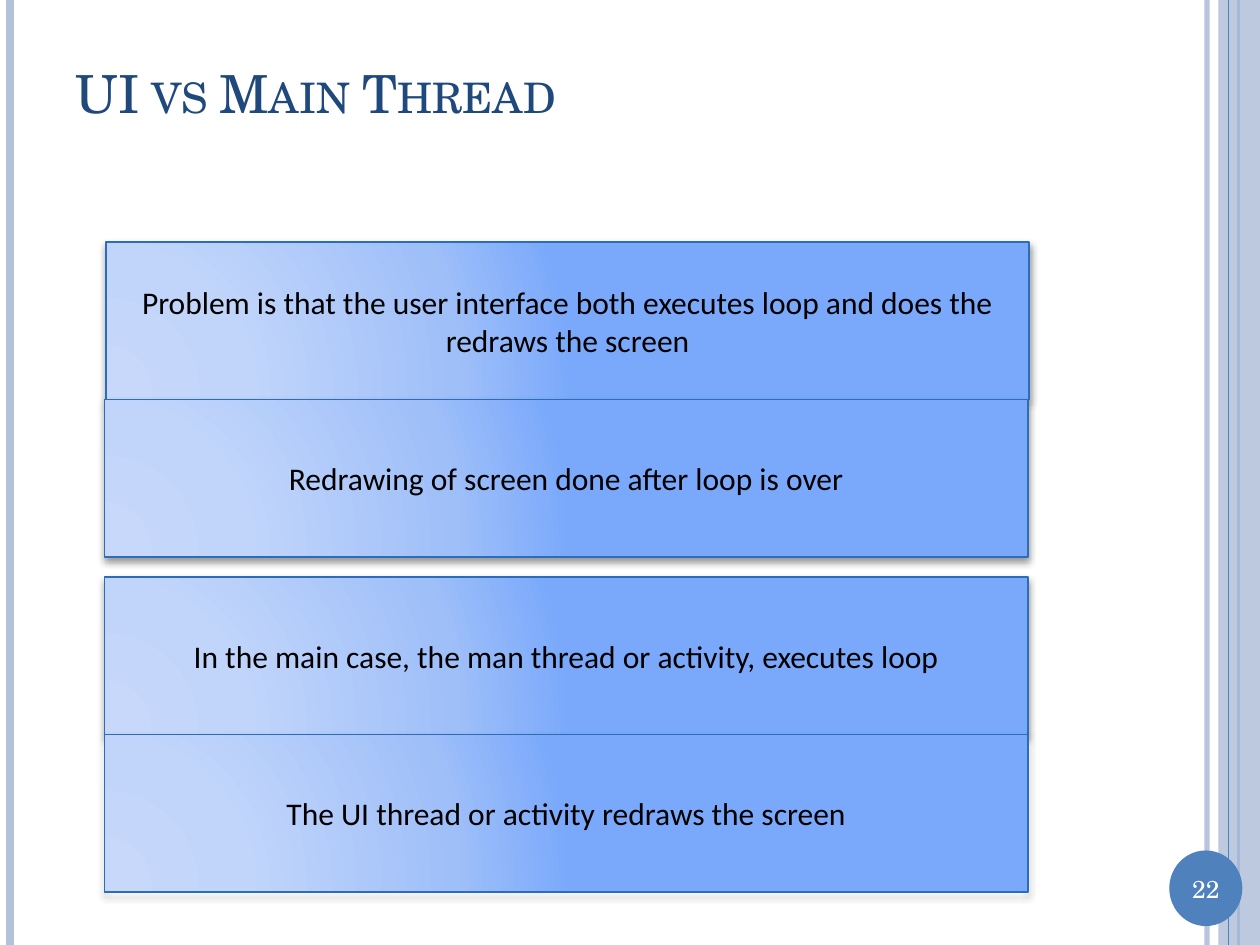
from pptx import Presentation
from pptx.util import Inches, Pt
from pptx.dml.color import RGBColor
from pptx.enum.shapes import MSO_SHAPE, MSO_CONNECTOR
from pptx.enum.text import PP_ALIGN, MSO_ANCHOR
from pptx.oxml import parse_xml
from pptx.oxml.ns import nsdecls
from lxml.etree import SubElement

C = {"pale": "B3C1DB", "blue": "4F81BD", "navy": "1F497D", "edge": "2C6CB9",
     "white": "FFFFFF", "black": "000000"}
STOPS = [(0, "C7D8FB"), (30, "C1D5FA"), (75, "9FBFF9"), (100, "7AA9FB")]
SERIF, SANS = "TeX Gyre Schola", "Calibri"


def add_text(sp, text, size, font, color, align):
    tf = sp.text_frame
    tf.word_wrap = True
    tf.vertical_anchor = MSO_ANCHOR.MIDDLE
    p = tf.paragraphs[0]
    p.alignment = align
    r = p.add_run()
    r.text = text
    r.font.size = Pt(size)
    r.font.name = font
    r.font.color.rgb = RGBColor.from_string(C[color])
    return r


def set_alpha(fmt, percent):
    clr = fmt._xPr.find(".//{*}srgbClr")
    SubElement(clr, clr.tag.replace("srgbClr", "alpha"), val=str(percent * 1000))


prs = Presentation()
prs.slide_width, prs.slide_height = Inches(10), Inches(7.5)
s = prs.slides.add_slide(prs.slide_layouts[6])

band = None
for x, color, width, alpha in [(9.58, "pale", 3, 93), (0.08, "pale", 4.5, 100),
                               (9.83, "blue", 1.5, 100), (9.75, "blue", 0.75, 100)]:
    if x == 9.75:
        band = s.shapes.add_shape(MSO_SHAPE.RECTANGLE, Inches(9.67), 0, Inches(0.33), Inches(7.5))
        band.shadow.inherit = False
        band.fill.solid()
        band.fill.fore_color.rgb = RGBColor.from_string(C["pale"])
        set_alpha(band.fill, 87)
        band.line.fill.background()
    line = s.shapes.add_connector(MSO_CONNECTOR.STRAIGHT, Inches(x), 0, Inches(x), Inches(7.5))
    line.line.color.rgb = RGBColor.from_string(C[color])
    line.line.width = Pt(width)
    if alpha < 100:
        set_alpha(line.line.fill, alpha)
    line._element.spPr.append(parse_xml(f"<a:effectLst {nsdecls('a')}/>"))

badge = s.shapes.add_shape(MSO_SHAPE.OVAL, Inches(9.28), Inches(6.75), Inches(0.58), Inches(0.6))
badge.shadow.inherit = False
badge.fill.solid()
badge.fill.fore_color.rgb = RGBColor.from_string(C["blue"])
badge.line.fill.background()
number = s.shapes.add_textbox(Inches(9.28), Inches(6.88), Inches(0.58), Inches(0.34))
add_text(number, "22", 14, SERIF, "white", PP_ALIGN.CENTER)

title = s.shapes.add_textbox(Inches(0.5), Inches(0.3), Inches(8.67), Inches(0.87))
r = add_text(title, "UI vs Main Thread", 30, SERIF, "navy", PP_ALIGN.LEFT)
r.font._element.set("cap", "small")

stops = "".join(f'<a:gs pos="{pos * 1000}"><a:srgbClr val="{c}"/></a:gs>' for pos, c in STOPS)
gradient = (f'<a:gradFill {nsdecls("a")} rotWithShape="1"><a:gsLst>{stops}</a:gsLst>'
            '<a:path path="circle"><a:fillToRect l="5000" t="100000" r="120000" b="10000"/>'
            '</a:path></a:gradFill>')
shadow = (f'<a:outerShdw {nsdecls("a")} blurRad="{Pt(4)}" dist="{Pt(2)}" dir="5400000" '
          f'rotWithShape="0"><a:srgbClr val="{C["black"]}"><a:alpha val="40000"/></a:srgbClr>'
          '</a:outerShdw>')

boxes = [
    (0.84, 1.92, "Problem is that the user interface both executes loop and does the redraws the screen"),
    (0.83, 4.58, "In the main case, the man thread or activity, executes loop"),
    (0.83, 3.17, "Redrawing of screen done after loop is over"),
    (0.83, 5.83, "The UI thread or activity redraws the screen"),
]
for x, y, text in boxes:
    sp = s.shapes.add_shape(MSO_SHAPE.RECTANGLE, Inches(x), Inches(y), Inches(7.33), Inches(1.25))
    sp.line.color.rgb = RGBColor.from_string(C["edge"])
    sp.line.width = Pt(1)
    sp.shadow.inherit = False
    spPr = sp._element.spPr
    spPr.insert(2, parse_xml(gradient))
    spPr.find("{*}effectLst").append(parse_xml(shadow))
    tf = sp.text_frame
    tf.margin_left = tf.margin_right = tf.margin_top = tf.margin_bottom = Inches(0.05)
    add_text(sp, text, 18, SANS, "black", PP_ALIGN.CENTER)

prs.save("out.pptx")
